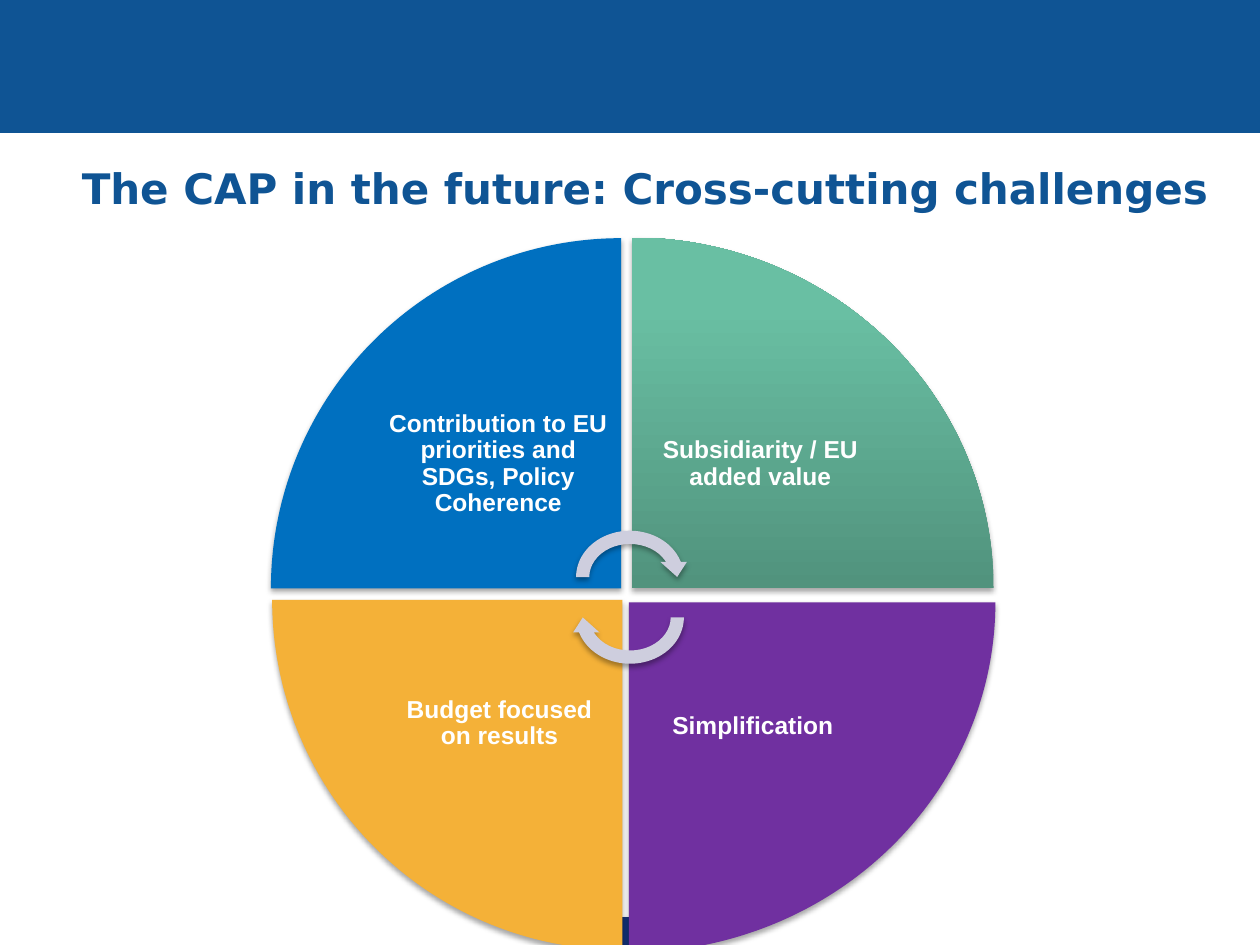
from dataclasses import dataclass
from typing import Optional

from lxml import etree
from pptx import Presentation, util as u
from pptx.dml.color import RGBColor
from pptx.enum import shapes, text
from pptx.oxml import parse_xml
from pptx.oxml.ns import nsdecls

NAVY = RGBColor(0x0F, 0x54, 0x94)
INDIGO = RGBColor(0x13, 0x31, 0x76)
BLUE = RGBColor(0x00, 0x70, 0xC0)
PURPLE = RGBColor(0x70, 0x30, 0xA0)
AMBER = RGBColor(0xF4, 0xB1, 0x38)
LAVENDER = RGBColor(0xCE, 0xCE, 0xDE)
WHITE = RGBColor(0xFF, 0xFF, 0xFF)
GREEN_STOPS = ((0, "51937D"), (80, "69BFA3"), (100, "68C2A4"))

Box = tuple[float, float, float, float]


@dataclass
class Quadrant:
    label: str
    wedge: Box
    label_box: Box
    rotation: int
    color: Optional[RGBColor]  # None means the green gradient


QUADRANTS = (
    Quadrant("Contribution to EU priorities and SDGs, Policy Coherence",
             (2.15, 1.89, 2.78, 2.78), (2.97, 2.7, 1.97, 1.97), 0, BLUE),
    Quadrant("Subsidiarity / EU added value",
             (5.06, 1.84, 2.78, 2.87), (5.02, 2.7, 2.03, 1.97), 90, None),
    Quadrant("Simplification",
             (4.99, 4.78, 2.91, 2.78), (4.99, 4.78, 1.97, 1.97), 180, PURPLE),
    Quadrant("Budget focused on results",
             (2.16, 4.76, 2.78, 2.78), (2.98, 4.76, 1.97, 1.97), 270, AMBER),
)


def inches(box: Box) -> list[u.Length]:
    return [u.Inches(value) for value in box]


def add_shadow(shape) -> None:
    shape.shadow.inherit = False
    effects = shape._element.spPr.find("{*}effectLst")
    effects.append(parse_xml(
        f'<a:outerShdw {nsdecls("a")} blurRad="{u.Pt(3.1)}" dist="{u.Pt(1.8)}" '
        'dir="5400000" rotWithShape="0"><a:srgbClr val="000000">'
        '<a:alpha val="35000"/></a:srgbClr></a:outerShdw>'))


def fill_green(shape) -> None:
    """Fill with a gradient that stays upright when the shape turns."""
    shape.fill.gradient()
    shape.fill.gradient_angle = 90
    gradient = shape._element.spPr.find("{*}gradFill")
    gradient.set("rotWithShape", "0")
    stops = gradient.find("{*}gsLst")
    for stop in list(stops):
        stops.remove(stop)
    for position, color in GREEN_STOPS:
        stop = etree.SubElement(stops, stops.tag.replace("gsLst", "gs"), pos=str(position * 1000))
        etree.SubElement(stop, stops.tag.replace("gsLst", "srgbClr"), val=color)


def add_preset(slide, kind, box: Box, color: Optional[RGBColor], rotation: int = 0,
               outlined: bool = False, shadow: bool = True) -> None:
    shape = slide.shapes.add_shape(kind, *inches(box))
    shape.rotation = rotation
    if color is None:
        fill_green(shape)
    else:
        shape.fill.solid()
        shape.fill.fore_color.rgb = color
    if outlined:
        shape.line.color.rgb = color
        shape.line.width = u.Pt(0.75)
    else:
        shape.line.fill.background()
    if shadow:
        add_shadow(shape)
    else:
        shape.shadow.inherit = False


def write_text(shape, content: str, font: str, size: int, color: RGBColor) -> None:
    frame = shape.text_frame
    frame.word_wrap = True
    frame.auto_size = text.MSO_AUTO_SIZE.NONE
    frame.vertical_anchor = text.MSO_ANCHOR.MIDDLE
    paragraph = frame.paragraphs[0]
    paragraph.alignment = text.PP_ALIGN.CENTER
    paragraph.line_spacing = 0.9
    run = paragraph.add_run()
    run.text = content
    run.font.name = font
    run.font.size = u.Pt(size)
    run.font.bold = True
    run.font.color.rgb = color


def add_label(slide, quadrant: Quadrant) -> None:
    label = slide.shapes.add_textbox(*inches(quadrant.label_box))
    write_text(label, quadrant.label, "Arial", 14, WHITE)
    frame = label.text_frame
    frame.margin_left = frame.margin_right = u.Inches(0.11)
    frame.margin_top = frame.margin_bottom = u.Inches(0.11)


def main() -> None:
    presentation = Presentation()
    presentation.slide_width, presentation.slide_height = u.Inches(10), u.Inches(7.5)
    slide = presentation.slides.add_slide(presentation.slide_layouts[5])
    preset = shapes.MSO_SHAPE

    title = slide.shapes.title
    title.left, title.top, title.width, title.height = inches((0.12, 1.17, 10, 0.69))
    write_text(title, "The CAP in the future: Cross-cutting challenges",
               "DejaVu Sans", 24, NAVY)

    add_preset(slide, preset.RECTANGLE, (0, 0, 10, 1.05), NAVY, outlined=True, shadow=False)
    add_preset(slide, preset.RECTANGLE, (4.66, 7.28, 0.67, 0.22), INDIGO, outlined=True)
    for quadrant in QUADRANTS:
        add_preset(slide, preset.PIE_WEDGE, quadrant.wedge, quadrant.color, quadrant.rotation)
        add_label(slide, quadrant)
    for top, rotation in ((4.16, 0), (4.48, 180)):
        add_preset(slide, preset.CIRCULAR_ARROW, (4.52, top, 0.96, 0.84), LAVENDER, rotation)

    presentation.save("out.pptx")


if __name__ == "__main__":
    main()
